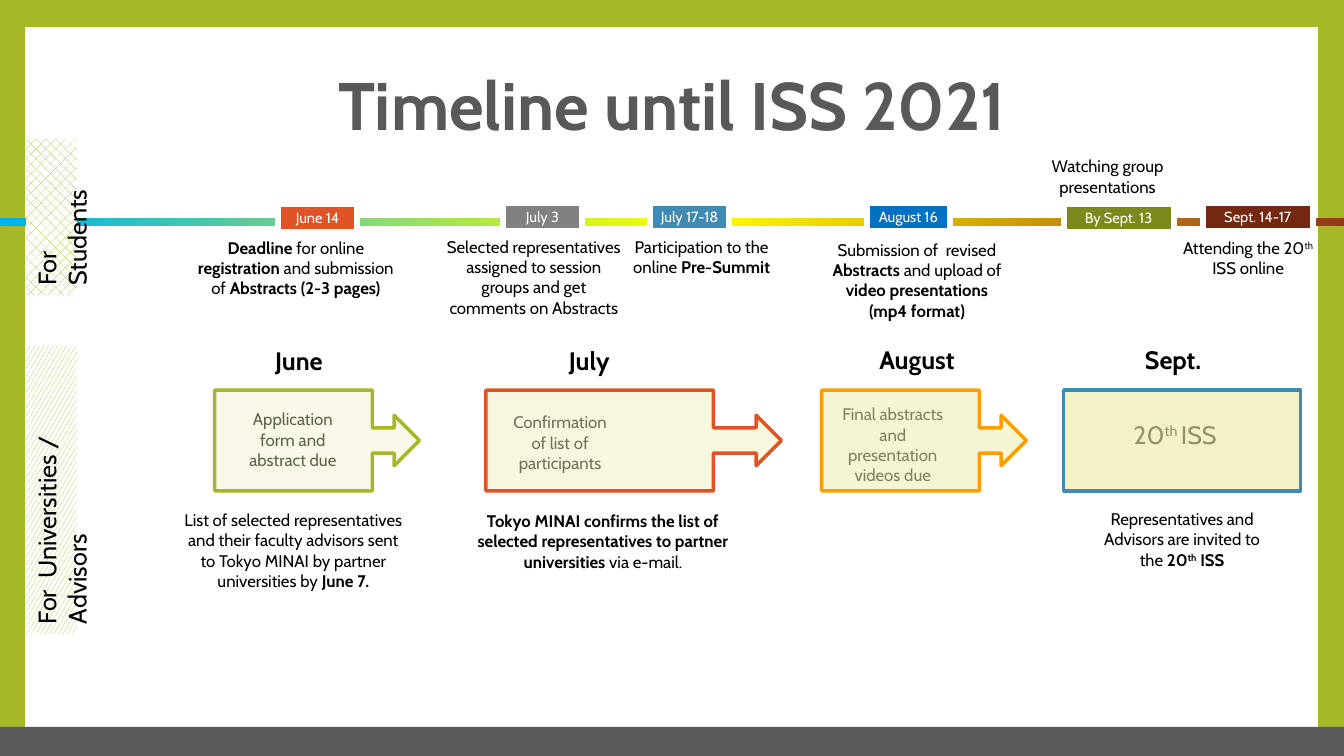
"""Build the summit timeline slide for students and universities."""
from copy import deepcopy

from lxml import etree
from pptx import Presentation
from pptx import util as u
from pptx.dml.color import RGBColor
from pptx.enum import dml, shapes, text
from pptx.oxml.ns import qn

LIME = RGBColor(0xA6, 0xB7, 0x27)
WHITE = RGBColor(0xFF, 0xFF, 0xFF)
BLACK = RGBColor(0, 0, 0)
GRAY = RGBColor(0x59, 0x59, 0x59)
CHARCOAL = RGBColor(0x40, 0x40, 0x40)
ORANGE = RGBColor(0xDF, 0x53, 0x27)
SILVER = RGBColor(0x81, 0x81, 0x83)
STEEL = RGBColor(0x41, 0x8A, 0xB3)
BLUE = RGBColor(0x00, 0x70, 0xC0)
OLIVE = RGBColor(0x7D, 0x89, 0x1D)
MAROON = RGBColor(0x72, 0x28, 0x11)
AMBER = RGBColor(0xFE, 0x9E, 0x00)
CREAM = RGBColor(0xE7, 0xE5, 0x91)
SKY = RGBColor(0x00, 0xB0, 0xF0)
YELLOW = RGBColor(0xFF, 0xFF, 0x00)
RUST = RGBColor(0x99, 0x36, 0x17)

RECT = shapes.MSO_SHAPE.RECTANGLE
CALLOUT = shapes.MSO_SHAPE.RIGHT_ARROW_CALLOUT
CENTER = text.PP_ALIGN.CENTER


class TimelineSlide:
    """Holds the font and the current slide, and draws each kind of element."""

    font = "Cabin"

    def __init__(self, prs):
        self.s = prs.slides.add_slide(prs.slide_layouts[5])
        self.s.background.fill.solid()
        self.s.background.fill.fore_color.rgb = LIME

    def add_runs(self, sp, runs, size, color, align=CENTER, bold=False):
        tf = sp.text_frame
        tf.word_wrap = True
        p = tf.paragraphs[0]
        p.alignment = align
        for words, marks in runs:
            r = p.add_run()
            r.text = words
            r.font.name = self.font
            r.font.size = u.Pt(size)
            r.font.color.rgb = color
            r.font.bold = bold or "b" in marks
            if "^" in marks:
                r._r.get_or_add_rPr().set("baseline", "30000")
        return p

    def title(self, box, words):
        sp = self.s.shapes.title
        sp.left, sp.top, sp.width, sp.height = map(u.Inches, box)
        sp.text_frame.vertical_anchor = text.MSO_ANCHOR.MIDDLE
        self.add_runs(sp, [(words, "")], 48, GRAY, bold=True).line_spacing = 0.9

    def text(self, box, runs, size=12, color=BLACK, bold=False):
        sp = self.s.shapes.add_textbox(*map(u.Inches, box))
        self.add_runs(sp, runs, size, color, bold=bold)
        sp.text_frame.auto_size = text.MSO_AUTO_SIZE.SHAPE_TO_FIT_TEXT

    def shape(self, box, fill=None, line=None, width=1, kind=RECT):
        sp = self.s.shapes.add_shape(kind, *map(u.Inches, box))
        sp.shadow.inherit = False
        if fill is not None:
            sp.fill.solid()
            sp.fill.fore_color.rgb = fill
        if line is None:
            sp.line.fill.background()
        else:
            sp.line.color.rgb = line
            sp.line.width = u.Pt(width)
        return sp

    def frame(self, box, fill):
        sp = self.shape(box, fill)
        self.s.shapes.title.element.addprevious(sp.element)

    def gradient_bar(self, box, stops):
        sp = self.shape(box)
        sp.fill.gradient()
        sp.fill.gradient_angle = 0
        first = sp.element.spPr.find(".//" + qn("a:gs"))
        first.addnext(deepcopy(first))
        for stop, (position, color) in zip(sp.fill.gradient_stops, stops):
            stop.position = position
            stop.color.rgb = color

    def date_tag(self, box, words, fill):
        sp = self.shape(box, fill, WHITE, 4.25)
        sp.text_frame.vertical_anchor = text.MSO_ANCHOR.TOP
        self.add_runs(sp, [(words, "")], 10.5, WHITE)
        sp.text_frame.auto_size = text.MSO_AUTO_SIZE.SHAPE_TO_FIT_TEXT

    def side_label(self, box, words, pattern):
        sp = self.shape(box)
        sp.fill.patterned()
        sp.fill.pattern = pattern
        sp.fill.fore_color.rgb = LIME
        sp.fill.back_color.rgb = WHITE
        sp.text_frame.vertical_anchor = text.MSO_ANCHOR.TOP
        self.add_runs(sp, [(words, "")], 18, BLACK, text.PP_ALIGN.LEFT)
        sp.text_frame.auto_size = text.MSO_AUTO_SIZE.SHAPE_TO_FIT_TEXT
        sp.element.txBody.find(qn("a:bodyPr")).set("vert", "vert270")

    def stage(self, left, width, line, opacity, kind=CALLOUT):
        sp = self.shape((left, 3.87, width, 1), CREAM, line, 2.5, kind)
        if kind == CALLOUT:
            for i, value in enumerate((0.25, 0.25, 0.25, 0.77)):
                sp.adjustments[i] = value
        color = sp.element.spPr.find(qn("a:solidFill"))[0]
        etree.SubElement(color, qn("a:alpha")).set("val", str(opacity * 1000))


def main():
    prs = Presentation()
    prs.slide_width, prs.slide_height = u.Inches(13.33), u.Inches(7.5)
    t = TimelineSlide(prs)
    t.frame((0.25, 0.27, 12.82, 6.97), WHITE)
    t.frame((0, 7.21, 13.33, 0.29), GRAY)
    t.title((0, 0.65, 13.33, 0.85), "Timeline until ISS 2021")

    for left, top, height, size, runs in (
        (2.3, 4.01, 0.71, 12, [("Application form and abstract due", "")]),
        (4.95, 4.04, 0.71, 12, [("Confirmation of list of participants", "")]),
        (8.25, 3.96, 0.91, 12, [("Final abstracts and presentation videos due", "")]),
        (11.05, 4.11, 0.4, 18, [("20", ""), ("th ", "^"), ("ISS", "")]),
    ):
        t.text((left, top, 1.21, height), runs, size, CHARCOAL)

    for left, top, width, month in (
        (2.55, 3.38, 0.83, "June"),
        (5.43, 3.38, 0.83, "July"),
        (8.53, 3.37, 1.13, "August"),
        (11.22, 3.37, 0.83, "Sept."),
    ):
        t.text((left, top, width, 0.4), [(month, "")], 18, bold=True)

    t.gradient_bar((0, 2.16, 13.33, 0.08), [(0, SKY), (0.52, YELLOW), (1, RUST)])
    for left, top, width, date, fill in (
        (2.76, 2.02, 0.78, "June 14", ORANGE),
        (4.99, 2.01, 0.78, "July 3", SILVER),
        (6.45, 2.01, 0.78, "July 17-18", STEEL),
        (8.6, 2.01, 0.82, "August 16", BLUE),
        (10.55, 2.02, 1.09, "By Sept. 13", OLIVE),
        (11.93, 2.01, 1.09, "Sept. 14-17", MAROON),
    ):
        t.date_tag((left, top, width, 0.28), date, fill)

    t.side_label((0.26, 1.38, 0.5, 1.55), "For  Students",
                 dml.MSO_PATTERN.PERCENT_30)
    t.side_label((0.26, 3.43, 0.5, 2.86), "For  Universities / Advisors",
                 dml.MSO_PATTERN.LARGE_CONFETTI)

    for box, runs in (
        ((1.82, 2.31, 2.23, 0.71),
         [("Deadline", "b"), (" for online ", ""), ("registration", "b"),
          (" and submission of ", ""), ("Abstracts (2-3 pages)", "b")]),
        ((4.32, 2.3, 1.95, 0.91),
         [("Selected representatives assigned to session groups "
           "and get comments on Abstracts", "")]),
        ((6.18, 2.3, 1.56, 0.5),
         [("Participation to the online ", ""), ("Pre-Summit", "b")]),
        ((8.12, 2.33, 1.95, 0.91),
         [("Submission of  revised ", ""), ("Abstracts ", "b"),
          ("and upload of ", ""), ("video presentations (mp4 format)", "b")]),
        ((10.04, 1.5, 1.89, 0.5), [("Watching group presentations", "")]),
        ((11.6, 2.31, 1.56, 0.5),
         [("Attending the 20", ""), ("th", "^"), (" ISS online", "")]),
        ((1.68, 5.01, 2.46, 0.91),
         [("List of selected representatives and their faculty advisors sent "
           "to Tokyo MINAI by partner universities by ", ""), ("June 7.", "b")]),
        ((4.44, 5.02, 3.08, 0.71),
         [("Tokyo MINAI confirms the list of selected representatives "
           "to partner universities ", "b"), ("via e-mail.", "")]),
        ((10.75, 5, 1.95, 0.71),
         [("Representatives and Advisors are invited to the ", ""),
          ("20", "b"), ("th", "b^"), (" ISS", "b")]),
    ):
        t.text(box, runs)

    t.stage(2.13, 2.03, LIME, 20)
    t.stage(4.82, 2.93, ORANGE, 30)
    t.stage(8.15, 2.03, AMBER, 40)
    t.stage(10.55, 2.35, STEEL, 50, RECT)
    prs.save("out.pptx")


if __name__ == "__main__":
    main()
